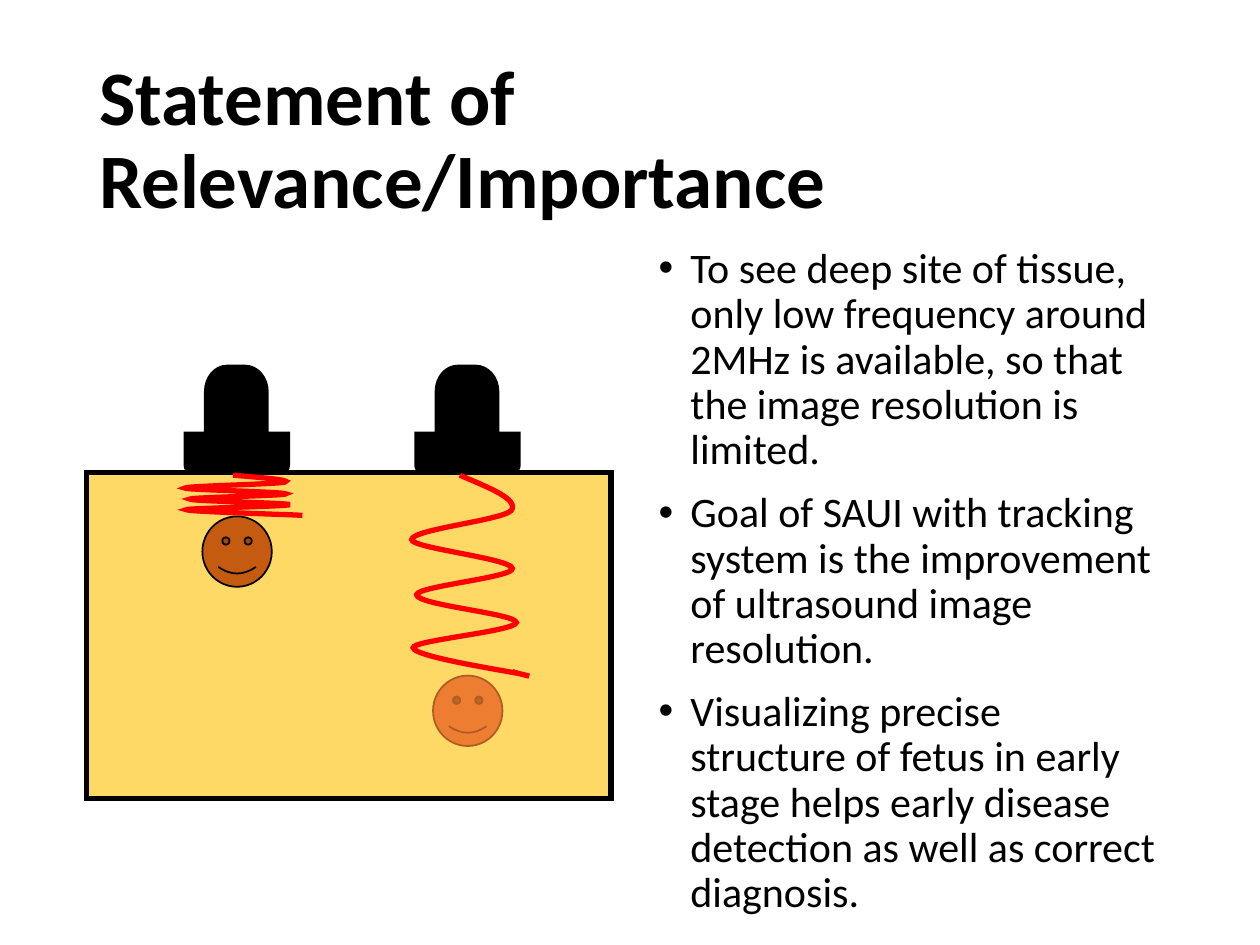
from lxml import etree
from pptx import Presentation
from pptx.dml.color import RGBColor
from pptx.enum.shapes import MSO_SHAPE
from pptx.enum.text import MSO_ANCHOR
from pptx.oxml.ns import qn
from pptx.util import Cm, Pt

RECTANGLE = MSO_SHAPE.RECTANGLE
SMILEY = MSO_SHAPE.SMILEY_FACE
MIDDLE = MSO_ANCHOR.MIDDLE

COLORS = {
    "black": "000000", "tissue": "FFD966", "wave": "FF0000",
    "shallow": "C55A11", "deep": "ED7D31", "deep line": "AF5C24",
}
INDENT = Cm(0.64)

# Outlines in cm: a start point, then lines (x, y) or Bezier curves (two controls, end)
PROBE_SIZE = (2.11, 2.16)
PROBE = [
    (0.86, 0), (1.22, 0), (1.47, 0, 1.68, 0.23, 1.68, 0.53), (1.68, 1.35),
    (2.11, 1.35), (2.11, 2.01), (2.11, 2.08, 2.06, 2.16, 2.01, 2.16),
    (0.1, 2.16), (0.05, 2.16, 0, 2.08, 0, 2.01), (0, 1.35), (0.41, 1.35),
    (0.41, 0.53), (0.41, 0.23, 0.61, 0, 0.86, 0),
]
WAVE_SIZE = (2.39, 4.04)
WAVE = [
    (0.97, 0), (1.55, 0.25, 2.16, 0.48, 2.01, 0.71),
    (1.83, 0.91, 0, 1.09, 0, 1.3), (0, 1.47, 2.01, 1.68, 2.03, 1.88),
    (2.06, 2.06, 0.1, 2.24, 0.1, 2.41), (0.1, 2.62, 2.11, 2.79, 2.11, 2.97),
    (2.08, 3.15, 0, 3.33, 0.03, 3.48), (0.05, 3.66, 1.88, 3.94, 2.21, 4.01),
    (2.54, 4.09, 2.29, 4.04, 2.03, 3.96),
]

deck = Presentation()
deck.slide_width, deck.slide_height = Cm(25.4), Cm(19.05)
page = deck.slides.add_slide(deck.slide_layouts[6])


def draw_outline(outline, size, left, top, closed, stretch=1):
    """Draw an outline at left, top (cm), scaled vertically by stretch."""
    ends = [(Cm(left + segment[-2]), Cm(top + segment[-1] * stretch)) for segment in outline]
    builder = page.shapes.build_freeform(*ends[0])
    builder.add_line_segments(ends[1:], close=closed)
    shape = builder.convert_to_shape()
    shape.width, shape.height = Cm(size[0]), Cm(size[1] * stretch)
    track = shape._element.find(".//" + qn("a:path"))
    track.set("w", str(shape.width))
    track.set("h", str(shape.height))
    for element, segment in zip(track.findall(qn("a:lnTo")), outline[1:]):
        if len(segment) == 6:
            curve = etree.Element(qn("a:cubicBezTo"))
            for x, y in zip(segment[::2], segment[1::2]):
                etree.SubElement(curve, qn("a:pt"), x=str(Cm(x)), y=str(Cm(y * stretch)))
            track.replace(element, curve)
    return shape


def paint(shape, fill, line, width):
    shape.shadow.inherit = False
    if fill:
        shape.fill.solid()
        shape.fill.fore_color.rgb = RGBColor.from_string(COLORS[fill])
    else:
        shape.fill.background()
    shape.line.color.rgb = RGBColor.from_string(COLORS[line])
    shape.line.width = Pt(width)
    etree.SubElement(shape.line._get_or_add_ln(), qn("a:miter"), lim="800000")


# Title and bullets
texts = [
    ((1.75, 1.02, 21.89, 3.68), {"size": Pt(44), "bold": True}, False,
     ["Statement of Relevance/Importance"]),
    ((13.03, 5.08, 10.64, 13.31), {"size": Pt(24), "bold": False}, True,
     ["To see deep site of tissue, only low frequency around 2MHz is available, "
      "so that the image resolution is limited.",
      "Goal of SAUI with tracking system is the improvement of ultrasound image "
      "resolution.",
      "Visualizing precise structure of fetus in early stage helps early disease "
      "detection as well as correct diagnosis."]),
]
for place, font_format, bulleted, lines in texts:
    box = page.shapes.add_textbox(*map(Cm, place))
    frame = box.text_frame
    frame.word_wrap = True
    frame.vertical_anchor = MIDDLE
    for index, line in enumerate(lines):
        para = frame.add_paragraph() if index else frame.paragraphs[0]
        para.line_spacing = 0.9
        span = para.add_run()
        span.text = line
        span.font.name = "Calibri"
        span.font.color.rgb = RGBColor.from_string(COLORS["black"])
        for name, value in font_format.items():
            setattr(span.font, name, value)
        if bulleted:
            para.space_before = Pt(10)
            properties = para._p.get_or_add_pPr()
            properties.set("marL", str(INDENT))
            properties.set("indent", str(-INDENT))
            etree.SubElement(properties, qn("a:buFont"), typeface="Arial")
            etree.SubElement(properties, qn("a:buChar"), char="•")

# Tissue block, then a probe, target and wave for each depth
tissue = page.shapes.add_shape(RECTANGLE, Cm(1.75), Cm(9.52), Cm(10.57), Cm(6.58))
paint(tissue, "tissue", "black", 3)

scans = [
    # probe left, face left, face top, face fill, face line, wave left, wave stretch
    (3.72, 4.08, 10.41, "shallow", "black", 3.73, 0.2),
    (8.37, 8.73, 13.62, "deep", "deep line", 8.3, 1),
]
for probe_left, face_left, face_top, fill, line, wave_left, stretch in scans:
    probe = draw_outline(PROBE, PROBE_SIZE, probe_left, 7.37, True)
    paint(probe, "black", "black", 1)
    face = page.shapes.add_shape(SMILEY, Cm(face_left), Cm(face_top), Cm(1.4), Cm(1.42))
    paint(face, fill, line, 1)
    wave = draw_outline(WAVE, WAVE_SIZE, wave_left, 9.58, False, stretch)
    paint(wave, None, "wave", 3)

deck.save("out.pptx")
